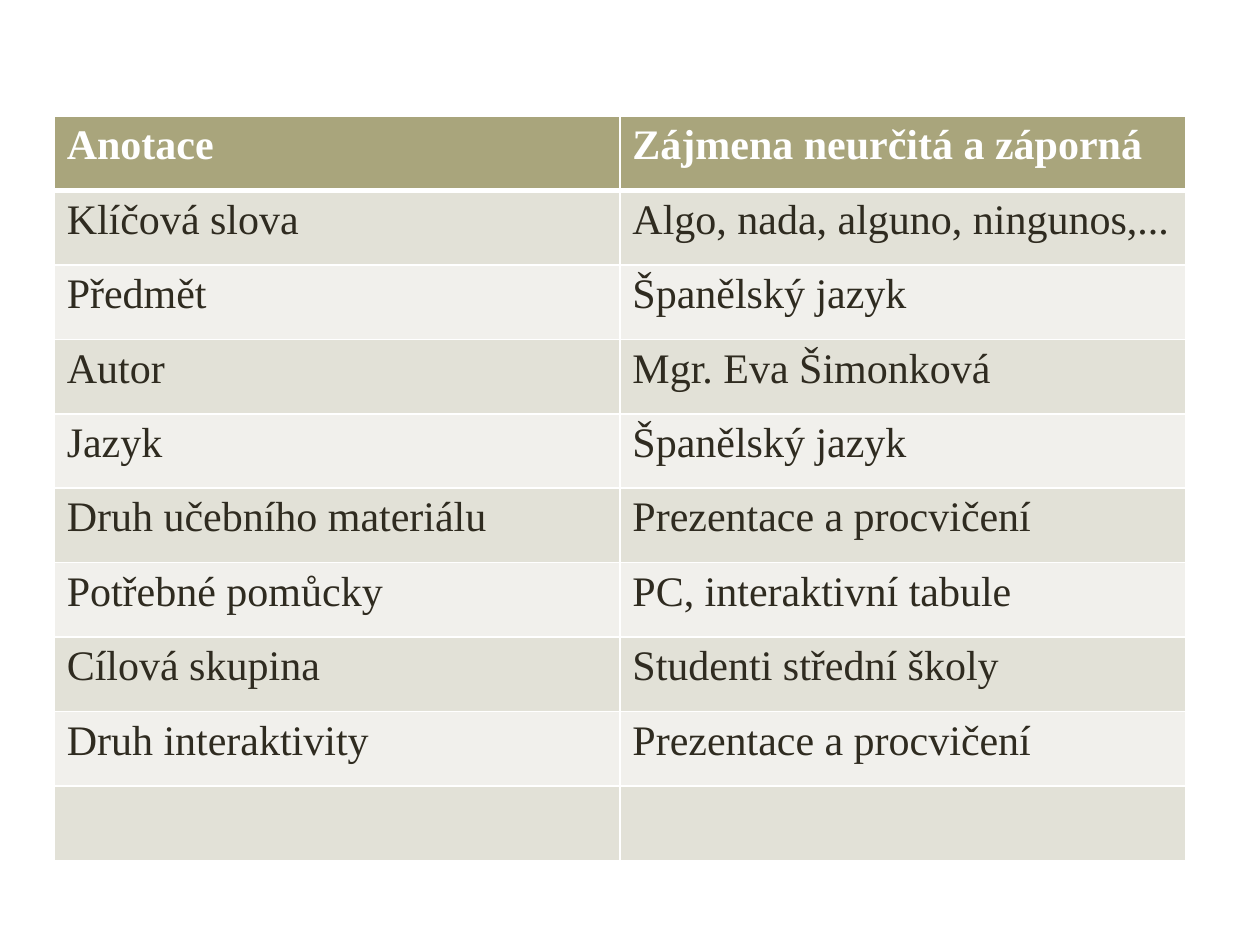
"""Build the annotation slide of a Spanish lesson on indefinite pronouns."""
from lxml.etree import SubElement
from pptx import Presentation
from pptx.dml.color import RGBColor
from pptx.oxml.ns import qn
from pptx.util import Inches, Pt

COLORS = {
    "header": "A9A57C",
    "odd": "E2E1D7",
    "even": "F1F0EC",
    "text": "2F2B20",
    "white": "FFFFFF",
}
FONT = "Times New Roman"
ROWS = [
    ("Anotace", "Zájmena neurčitá a záporná"),
    ("Klíčová slova", "Algo, nada, alguno, ningunos,..."),
    ("Předmět", "Španělský jazyk"),
    ("Autor", "Mgr. Eva Šimonková"),
    ("Jazyk", "Španělský jazyk"),
    ("Druh učebního materiálu", "Prezentace a procvičení"),
    ("Potřebné pomůcky", "PC, interaktivní tabule"),
    ("Cílová skupina", "Studenti střední školy"),
    ("Druh interaktivity", "Prezentace a procvičení"),
    ("", ""),
]


def color(name):
    return RGBColor.from_string(COLORS[name])


def add_borders(cell, top, bottom):
    properties = cell._tc.get_or_add_tcPr()
    for side, width in (("L", 1), ("R", 1), ("T", top), ("B", bottom)):
        line = SubElement(properties, qn(f"a:ln{side}"), w=str(Pt(width)))
        fill = SubElement(line, qn("a:solidFill"))
        SubElement(fill, qn("a:srgbClr"), val=COLORS["white"])


def fill_cell(cell, text, row):
    is_header = row == 0
    add_borders(cell, top=3 if row == 1 else 1, bottom=3 if is_header else 1)
    cell.fill.solid()
    cell.fill.fore_color.rgb = color("header" if is_header else "odd" if row % 2 else "even")
    if text:
        span = cell.text_frame.paragraphs[0].add_run()
        span.text = text
        span.font.name = FONT
        span.font.size = Pt(24)
        span.font.bold = is_header
        span.font.color.rgb = color("white" if is_header else "text")


def add_annotation_table(page):
    frame = page.shapes.add_table(
        len(ROWS), 2, Inches(0.43), Inches(0.92), Inches(8.98), Inches(5.91)
    )
    for row, texts in enumerate(ROWS):
        for column, text in enumerate(texts):
            fill_cell(frame.table.cell(row, column), text, row)


def main():
    deck = Presentation()
    deck.slide_width, deck.slide_height = Inches(10), Inches(7.5)
    page = deck.slides.add_slide(deck.slide_layouts[6])
    add_annotation_table(page)
    deck.save("out.pptx")


if __name__ == "__main__":
    main()
